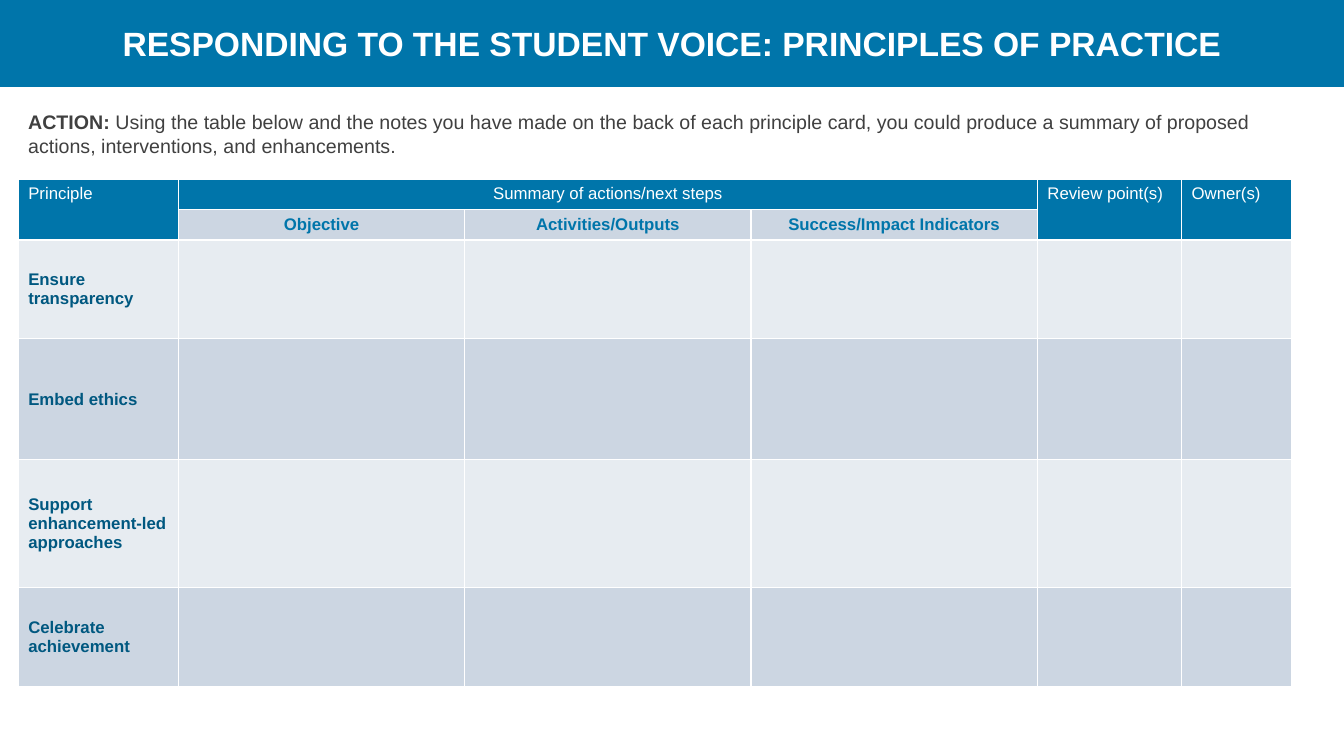
from dataclasses import dataclass

from lxml import etree
from pptx import Presentation
from pptx.dml.color import RGBColor
from pptx.enum.text import MSO_ANCHOR, MSO_AUTO_SIZE, PP_ALIGN
from pptx.oxml.ns import qn
from pptx.util import Pt

LEFT, CENTER = PP_ALIGN.LEFT, PP_ALIGN.CENTER
TOP, MIDDLE = MSO_ANCHOR.TOP, MSO_ANCHOR.MIDDLE
NO_AUTOFIT = MSO_AUTO_SIZE.NONE
GROW = MSO_AUTO_SIZE.SHAPE_TO_FIT_TEXT

WHITE = RGBColor(0xFF, 0xFF, 0xFF)
BLUE = RGBColor(0x00, 0x75, 0xAA)
DARK_BLUE = RGBColor(0x00, 0x58, 0x80)
GREY = RGBColor(0x40, 0x40, 0x40)
BAND_DARK = RGBColor(0xCC, 0xD6, 0xE2)
BAND_LIGHT = RGBColor(0xE7, 0xEC, 0xF1)

FONT = "Arial"
PAGE_WIDTH, PAGE_HEIGHT = 960, 540
MARGIN = 13
COLUMN_WIDTHS = (114.5, 204.5, 204.5, 204.5, 103, 78.5)
ROW_HEIGHTS = (19.5, 19.5, 70.5, 86.5, 91.5, 70.5)
HEADER_ROWS = 2


@dataclass(frozen=True)
class Label:
    row: int
    column: int
    text: str
    color: RGBColor
    bold: bool = True
    align: PP_ALIGN = LEFT
    anchor: MSO_ANCHOR = TOP
    row_span: int = 1
    column_span: int = 1


PRINCIPLES = (
    "Ensure transparency",
    "Embed ethics",
    "Support enhancement-led approaches",
    "Celebrate achievement",
)
SUBHEADINGS = ("Objective", "Activities/Outputs", "Success/Impact Indicators")

LABELS = [
    Label(0, 0, "Principle", WHITE, bold=False, row_span=2),
    Label(0, 1, "Summary of actions/next steps", WHITE, bold=False, align=CENTER, column_span=3),
    Label(0, 4, "Review point(s)", WHITE, bold=False, row_span=2),
    Label(0, 5, "Owner(s)", WHITE, bold=False, row_span=2),
    *(Label(1, column, text, BLUE, align=CENTER)
      for column, text in enumerate(SUBHEADINGS, start=1)),
    *(Label(row, 0, text, DARK_BLUE, anchor=MIDDLE)
      for row, text in enumerate(PRINCIPLES, start=HEADER_ROWS)),
]


def add_span(para, text: str, size: float, color: RGBColor, bold: bool) -> None:
    span = para.add_run()
    span.text = text
    span.font.name = FONT
    span.font.size = Pt(size)
    span.font.bold = bold
    span.font.color.rgb = color


def add_borders(cell) -> None:
    """Rule all four sides in white, ahead of the cell's fill in the XML."""
    properties = cell._tc.get_or_add_tcPr()
    for position, side in enumerate(("lnL", "lnR", "lnT", "lnB")):
        line = etree.Element(qn(f"a:{side}"), w=str(Pt(1)))
        fill = etree.SubElement(line, qn("a:solidFill"))
        etree.SubElement(fill, qn("a:srgbClr"), val=str(WHITE))
        properties.insert(position, line)


def cell_color(row: int, column: int) -> RGBColor:
    is_subheading = row == 1 and 1 <= column <= len(SUBHEADINGS)
    if row < HEADER_ROWS and not is_subheading:
        return BLUE
    return BAND_DARK if row % 2 else BAND_LIGHT


def add_title(page) -> None:
    title = page.shapes.title
    title.left, title.top = Pt(0), Pt(0)
    title.width, title.height = Pt(PAGE_WIDTH), Pt(62)
    title.fill.solid()
    title.fill.fore_color.rgb = BLUE
    frame = title.text_frame
    frame.auto_size = NO_AUTOFIT
    frame.vertical_anchor = MIDDLE
    para = frame.paragraphs[0]
    para.alignment = CENTER
    add_span(para, "RESPONDING TO THE STUDENT VOICE: PRINCIPLES OF PRACTICE", 24, WHITE, True)


def add_action(page) -> None:
    box = page.shapes.add_textbox(Pt(MARGIN), Pt(75), Pt(902), Pt(41))
    frame = box.text_frame
    frame.word_wrap = True
    frame.auto_size = GROW
    para = frame.paragraphs[0]
    add_span(para, "ACTION: ", 14, GREY, True)
    add_span(
        para,
        "Using the table below and the notes you have made on the back of each "
        "principle card, you could produce a summary of proposed actions, "
        "interventions, and enhancements.",
        14, GREY, False,
    )


def add_plan_table(page) -> None:
    table = page.shapes.add_table(
        len(ROW_HEIGHTS), len(COLUMN_WIDTHS), Pt(MARGIN), Pt(128.2),
        Pt(sum(COLUMN_WIDTHS)), Pt(sum(ROW_HEIGHTS)),
    ).table
    table.first_row = table.horz_banding = False
    for column, width in zip(table.columns, COLUMN_WIDTHS):
        column.width = Pt(width)
    for row, height in zip(table.rows, ROW_HEIGHTS):
        row.height = Pt(height)

    for row in range(len(ROW_HEIGHTS)):
        for column in range(len(COLUMN_WIDTHS)):
            cell = table.cell(row, column)
            cell.fill.solid()
            cell.fill.fore_color.rgb = cell_color(row, column)
            add_borders(cell)

    for label in LABELS:
        cell = table.cell(label.row, label.column)
        if label.row_span > 1 or label.column_span > 1:
            cell.merge(table.cell(label.row + label.row_span - 1,
                                  label.column + label.column_span - 1))
        cell.vertical_anchor = label.anchor
        para = cell.text_frame.paragraphs[0]
        para.alignment = label.align
        add_span(para, label.text, 12, label.color, label.bold)


def main() -> None:
    deck = Presentation()
    deck.slide_width, deck.slide_height = Pt(PAGE_WIDTH), Pt(PAGE_HEIGHT)
    page = deck.slides.add_slide(deck.slide_layouts.get_by_name("Title Only"))
    add_title(page)
    add_action(page)
    add_plan_table(page)
    deck.save("out.pptx")


if __name__ == "__main__":
    main()
